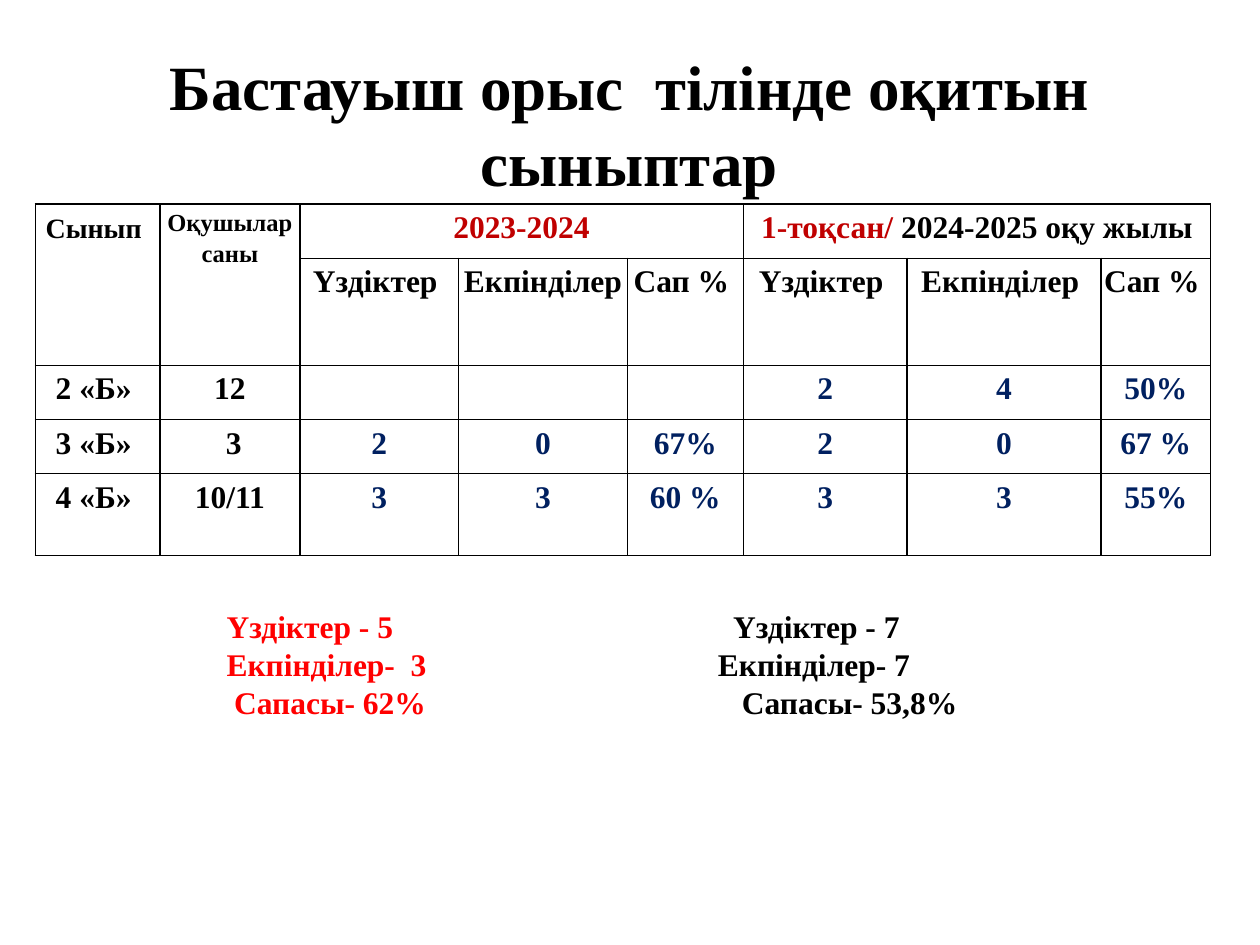
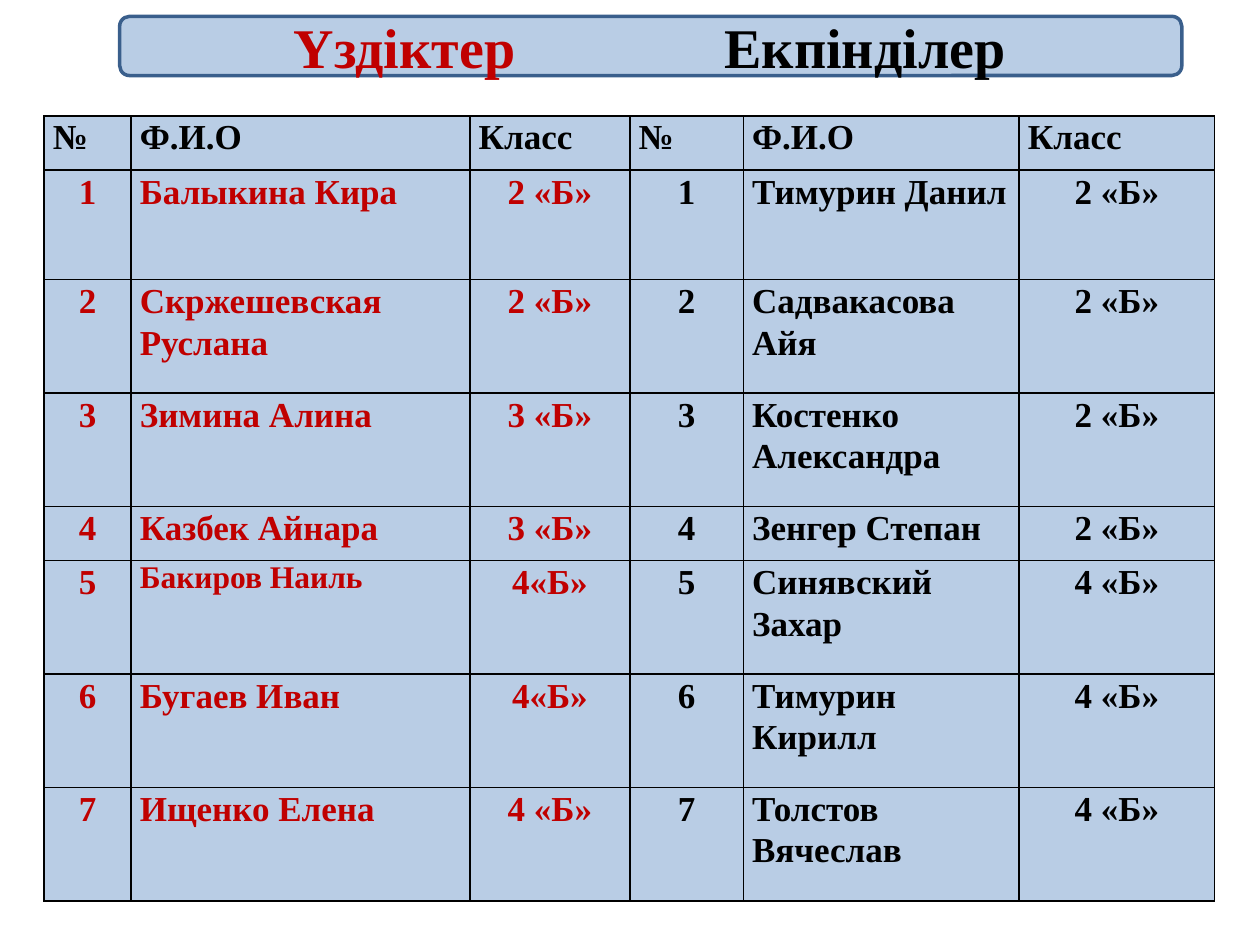
import dataclasses

import pptx
import pptx.dml.color
import pptx.enum.shapes
import pptx.enum.text
import pptx.oxml
import pptx.oxml.ns
import pptx.util
from pptx.util import Inches

ALIGN = pptx.enum.text.PP_ALIGN
ANCHOR = pptx.enum.text.MSO_ANCHOR


@dataclasses.dataclass(frozen=True)
class Theme:
    font: str = "Times New Roman"
    black: str = "000000"
    red: str = "C00000"
    bright_red: str = "FF0000"
    navy: str = "002060"
    panel: str = "B9CDE5"
    panel_line: str = "3A5F8C"
    title: int = 36
    banner: int = 32
    roster: int = 20
    body: int = 18
    label: int = 16
    small: int = 14


THEME = Theme()


@dataclasses.dataclass
class Span:
    text: str
    color: str = THEME.black
    size: int = THEME.body
    bold: bool = True


@dataclasses.dataclass
class Para:
    spans: list
    align: ALIGN = ALIGN.LEFT
    spacing: float = 1.0
    after: int = 0
    tabs: tuple = ()


def rgb(color):
    return pptx.dml.color.RGBColor.from_string(color)


class SlideBuilder:
    def __init__(self, deck, theme):
        self.deck = deck
        self.theme = theme
        self.page = None

    def new_page(self):
        self.page = self.deck.slides.add_slide(self.deck.slide_layouts[6])

    def fill_text(self, frame, paras):
        frame.word_wrap = True
        for index, para in enumerate(paras):
            paragraph = frame.add_paragraph() if index else frame.paragraphs[0]
            paragraph.alignment = para.align
            paragraph.line_spacing = para.spacing
            paragraph.space_after = pptx.util.Pt(para.after)
            if para.tabs:
                self.set_tabs(paragraph, para.tabs)
            for span in para.spans:
                run = paragraph.add_run()
                run.text = span.text
                run.font.name = self.theme.font
                run.font.size = pptx.util.Pt(span.size)
                run.font.bold = span.bold
                run.font.color.rgb = rgb(span.color)

    def set_tabs(self, paragraph, stops):
        marks = "".join(f'<a:tab pos="{Inches(stop)}" algn="l"/>' for stop in stops)
        namespace = pptx.oxml.ns.nsdecls("a")
        tab_list = pptx.oxml.parse_xml(f"<a:tabLst {namespace}>{marks}</a:tabLst>")
        paragraph._p.get_or_add_pPr().append(tab_list)

    def text(self, left, top, width, height, paras):
        box = self.page.shapes.add_textbox(
            Inches(left), Inches(top), Inches(width), Inches(height))
        self.fill_text(box.text_frame, paras)

    def banner(self, left, top, width, height, paras):
        shape = self.page.shapes.add_shape(
            pptx.enum.shapes.MSO_SHAPE.ROUNDED_RECTANGLE,
            Inches(left), Inches(top), Inches(width), Inches(height))
        shape.shadow.inherit = False
        shape.fill.solid()
        shape.fill.fore_color.rgb = rgb(self.theme.panel)
        shape.line.color.rgb = rgb(self.theme.panel_line)
        shape.line.width = pptx.util.Pt(2)
        shape.text_frame.vertical_anchor = ANCHOR.MIDDLE
        self.fill_text(shape.text_frame, paras)

    def table(self, left, top, columns, rows, cells, margins, fill=None, merges=()):
        """Fill a grid from rows of paragraph lists; merges are corner pairs."""
        grid = self.page.shapes.add_table(
            len(rows), len(columns), Inches(left), Inches(top),
            Inches(sum(columns)), Inches(sum(rows))).table
        grid.first_row = grid.horz_banding = False
        for column, width in zip(grid.columns, columns):
            column.width = Inches(width)
        for row, height in zip(grid.rows, rows):
            row.height = Inches(height)
        for row, contents in zip(grid.rows, cells):
            for cell, paras in zip(row.cells, contents):
                self.style_cell(cell, margins, fill)
                if paras:
                    self.fill_text(cell.text_frame, paras)
        for first, last in merges:
            grid.cell(*first).merge(grid.cell(*last))

    def style_cell(self, cell, margins, fill):
        side, top = margins
        cell.margin_left = cell.margin_right = Inches(side)
        cell.margin_top, cell.margin_bottom = Inches(top), 0
        properties = cell._tc.get_or_add_tcPr()
        for edge in "LRTB":
            properties.append(pptx.oxml.parse_xml(
                f'<a:ln{edge} {pptx.oxml.ns.nsdecls("a")} w="12700"><a:solidFill>'
                f'<a:srgbClr val="{self.theme.black}"/></a:solidFill></a:ln{edge}>'))
        if fill:
            cell.fill.solid()
            cell.fill.fore_color.rgb = rgb(fill)
        else:
            cell.fill.background()


def result_cell(*spans):
    return [Para(list(spans), ALIGN.CENTER, 1.15)]


def results_slide(builder):
    theme = builder.theme
    builder.new_page()
    title = Span("Бастауыш орыс  тілінде оқитын сыныптар", size=theme.title)
    builder.text(1.13, 0.33, 7.73, 1.31, [Para([title], ALIGN.CENTER)])

    summary = [
        ("Үздіктер - 5", "Үздіктер - 7", (1.43, 5.45)),
        ("Екпінділер-  3", "Екпінділер- 7", (1.43, 5.33)),
        ("Сапасы- 62%", "Сапасы- 53,8%", (1.49, 5.52)),
    ]
    builder.text(0.27, 4.77, 9.46, 1.31, [
        Para([Span("\t" + before, theme.bright_red), Span("\t" + now)], tabs=stops)
        for before, now, stops in summary])

    pupils = [line for word in ("Оқушылар", "саны")
              for line in result_cell(Span(word, size=theme.small))]
    periods = [
        result_cell(Span("Сынып", size=theme.label), Span(" ", bold=False)),
        pupils,
        result_cell(Span("2023-2024", theme.red)), None, None,
        result_cell(Span("1-тоқсан/", theme.red), Span(" 2024-2025 оқу жылы")),
        None, None,
    ]
    measures = [result_cell(Span(name))
                for name in ("Үздіктер ", "Екпінділер ", "Сап % ")]
    results = [
        ("2 «Б» ", "12", "", "", "", "2", "4", "50%"),
        ("3 «Б» ", " 3", "2", "0", "67%", "2", "0", "67 %"),
        ("4 «Б» ", "10/11", "3", "3", "60 %", "3", "3", "55%"),
    ]
    cells = [periods, [None, None] + measures * 2]
    for result in results:
        cells.append([
            result_cell(Span(value, theme.navy if index > 1 else theme.black))
            if value else None for index, value in enumerate(result)])
    builder.table(
        0.28, 1.62, [0.99, 1.11, 1.26, 1.34, 0.92, 1.3, 1.54, 0.87],
        [0.43, 0.85, 0.43, 0.43, 0.65], cells, margins=(0.02, 0.01),
        merges=[((0, 0), (1, 0)), ((0, 1), (1, 1)),
                ((0, 2), (0, 4)), ((0, 5), (0, 7))])


def roster_cell(text, color=THEME.black, align=ALIGN.LEFT):
    return [Para([Span(text, color, THEME.roster)], align, 1.07, 8)]


def roster_slide(builder):
    theme = builder.theme
    builder.new_page()
    builder.banner(0.95, 0.13, 8.43, 0.47, [Para([
        Span("\tҮздіктер", theme.red, theme.banner),
        Span("\tЕкпінділер", size=theme.banner)], tabs=(1.26, 4.68))])

    pupils = [
        ("Балыкина Кира", "2 «Б»", "Тимурин Данил", "2 «Б»"),
        ("Скржешевская Руслана", "2 «Б»", "Садвакасова Айя", "2 «Б»"),
        ("Зимина Алина", "3 «Б»", "Костенко Александра", "2 «Б»"),
        ("Казбек Айнара", "3 «Б»", "Зенгер Степан", "2 «Б»"),
        ("Бакиров Наиль", "4«Б»", "Синявский Захар", "4 «Б»"),
        ("Бугаев Иван", "4«Б»", "Тимурин Кирилл", "4 «Б»"),
        ("Ищенко Елена", "4 «Б»", "Толстов Вячеслав", "4 «Б»"),
    ]
    cells = [[roster_cell(name) for name in ("№", "Ф.И.О", "Класс") * 2]]
    for number, (top_name, top_class, good_name, good_class) in enumerate(pupils, 1):
        row = []
        for name, group, color in ((top_name, top_class, theme.red),
                                   (good_name, good_class, theme.black)):
            row += [roster_cell(str(number), color, ALIGN.CENTER),
                    roster_cell(name, color),
                    roster_cell(group, color, ALIGN.CENTER)]
        cells.append(row)
    cells[5][1] = [Para([Span("Бакиров Наиль", theme.red)])]
    builder.table(
        0.35, 0.92, [0.69, 2.69, 1.27, 0.9, 2.19, 1.55],
        [0.43, 0.87, 0.9, 0.9, 0.43, 0.9, 0.9, 0.9], cells,
        margins=(0.07, 0), fill=theme.panel)


def main():
    deck = pptx.Presentation()
    deck.slide_width, deck.slide_height = Inches(10), Inches(7.5)
    builder = SlideBuilder(deck, THEME)
    results_slide(builder)
    roster_slide(builder)
    deck.save("out.pptx")


if __name__ == "__main__":
    main()
